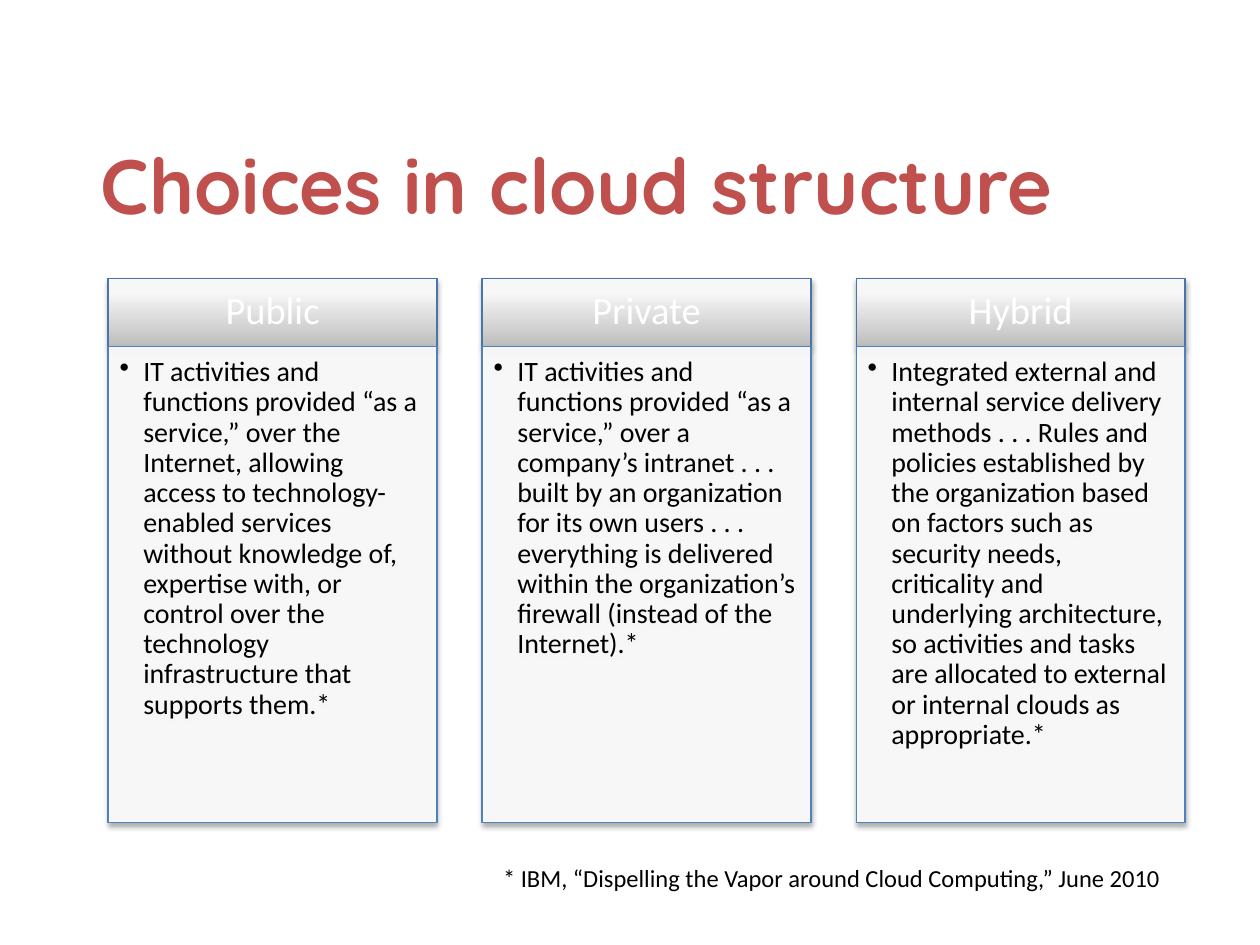
from pptx import Presentation
from pptx.dml.color import RGBColor
from pptx.enum.shapes import MSO_SHAPE
from pptx.enum.text import MSO_ANCHOR, MSO_AUTO_SIZE, PP_ALIGN
from pptx.oxml import parse_xml
from pptx.oxml.ns import nsdecls
from pptx.util import Cm, Pt

# Content
TITLE = "Choices in cloud structure\v"
CLOUDS = [
    ("Public", "IT activities and functions provided “as a service,” over the "
     "Internet, allowing access to technology-enabled services without "
     "knowledge of, expertise with, or control over the technology "
     "infrastructure that supports them.*"),
    ("Private", "IT activities and functions provided “as a service,” over a "
     "company’s intranet . . . built by an organization for its own users "
     ". . . everything is delivered within the organization’s ﬁrewall "
     "(instead of the Internet).*"),
    ("Hybrid", "Integrated external and internal service delivery methods "
     ". . . Rules and policies established by the organization based on "
     "factors such as security needs, criticality and underlying "
     "architecture, so activities and tasks are allocated to external or "
     "internal clouds as appropriate.*"),
]
NOTE = "* IBM, “Dispelling the Vapor around Cloud Computing,” June 2010"

# Colours
RED = RGBColor(0xC0, 0x50, 0x4D)
WHITE = RGBColor(0xFF, 0xFF, 0xFF)
BLACK = RGBColor(0, 0, 0)
EDGE = RGBColor(0x48, 0x75, 0xAC)
BLUE = RGBColor(0x4F, 0x81, 0xBD)

# Column grid, in cm
LEFT, TOP, WIDE, STEP = 2.18, 5.61, 6.63, 7.54
HEAD, BODY = 1.37, 9.6

# Fills and shadow
STOPS = [(0, "BEBEBE"), (80, "F7F7F7"), (100, "F8F8F8")]
GRADE = "<a:gradFill {ns}><a:gsLst>" + "".join(
    f'<a:gs pos="{pos * 1000}"><a:srgbClr val="{tone}"/></a:gs>'
    for pos, tone in STOPS) + '</a:gsLst><a:lin ang="16200000" scaled="0"/></a:gradFill>'
CLEAR = ('<a:solidFill {ns}><a:srgbClr val="FFFFFF"><a:alpha val="90000"/>'
         '</a:srgbClr></a:solidFill>')
SHADE = ('<a:effectLst {ns}><a:outerShdw blurRad="39370" dist="22860" dir="5400000" '
         'rotWithShape="0"><a:srgbClr val="000000"><a:alpha val="35000"/>'
         '</a:srgbClr></a:outerShdw></a:effectLst>')
DOT = '<a:buChar {ns} char="•"/>'


def put(node, xml):
    node.append(parse_xml(xml.format(ns=nsdecls("a"))))


def style(item, vals):
    for key, val in vals.items():
        setattr(item, key, val)


def write(shape, text, frame, para, font, color):
    box = shape.text_frame
    style(box, {"word_wrap": True, **frame})
    line = box.paragraphs[0]
    line.text = text
    style(line, para)
    for run in line.runs:
        style(run.font, font)
        run.font.color.rgb = color
    return line


def panel(x, y, high, fill, edge):
    shape = slide.shapes.add_shape(
        MSO_SHAPE.RECTANGLE, Cm(x), Cm(y), Cm(WIDE), Cm(high))
    props = shape._element.spPr
    put(props, fill)
    style(shape.line, {"width": Pt(0.75)})
    shape.line.color.rgb = edge
    put(props, SHADE)
    return shape


def pads(left, top, right, bottom):
    return {"margin_left": Cm(left), "margin_top": Cm(top),
            "margin_right": Cm(right), "margin_bottom": Cm(bottom)}


deck = Presentation()
style(deck, {"slide_width": Cm(25.4), "slide_height": Cm(19.05)})
slide = deck.slides.add_slide(deck.slide_layouts[5])

# Title
title = slide.shapes.title
style(title, {"left": Cm(1.78), "top": Cm(3.43),
              "width": Cm(22.86), "height": Cm(2.41)})
write(title, TITLE,
      {"vertical_anchor": MSO_ANCHOR.MIDDLE, "auto_size": MSO_AUTO_SIZE.NONE},
      {"alignment": PP_ALIGN.LEFT},
      {"name": "Quicksand", "size": Pt(44.1), "bold": True}, RED)

# Columns
for col, (name, text) in enumerate(CLOUDS):
    x = LEFT + col * STEP
    head = panel(x, TOP, HEAD, GRADE, EDGE)
    write(head, name,
          {"vertical_anchor": MSO_ANCHOR.MIDDLE, **pads(0.43, 0.25, 0.43, 0.25)},
          {"alignment": PP_ALIGN.CENTER, "line_spacing": 0.9},
          {"name": "Calibri", "size": Pt(22)}, WHITE)
    body = panel(x, TOP + HEAD, BODY, CLEAR, BLUE)
    line = write(body, text,
                 {"vertical_anchor": MSO_ANCHOR.TOP, **pads(0.23, 0.23, 0.3, 0.35)},
                 {"alignment": PP_ALIGN.LEFT, "line_spacing": 0.9, "level": 1},
                 {"name": "Calibri", "size": Pt(16)}, BLACK)
    props = line._p.get_or_add_pPr()
    props.set("marL", str(Cm(0.48)))
    props.set("indent", str(-Cm(0.48)))
    put(props, DOT)
    # The bullet takes the colour of the text beside it

# Source note
note = slide.shapes.add_textbox(Cm(5.03), Cm(17.27), Cm(18.62), Cm(0.86))
write(note, NOTE, {"auto_size": MSO_AUTO_SIZE.SHAPE_TO_FIT_TEXT},
      {"alignment": PP_ALIGN.RIGHT},
      {"name": "Calibri", "size": Pt(14)}, BLACK)

deck.save("out.pptx")
